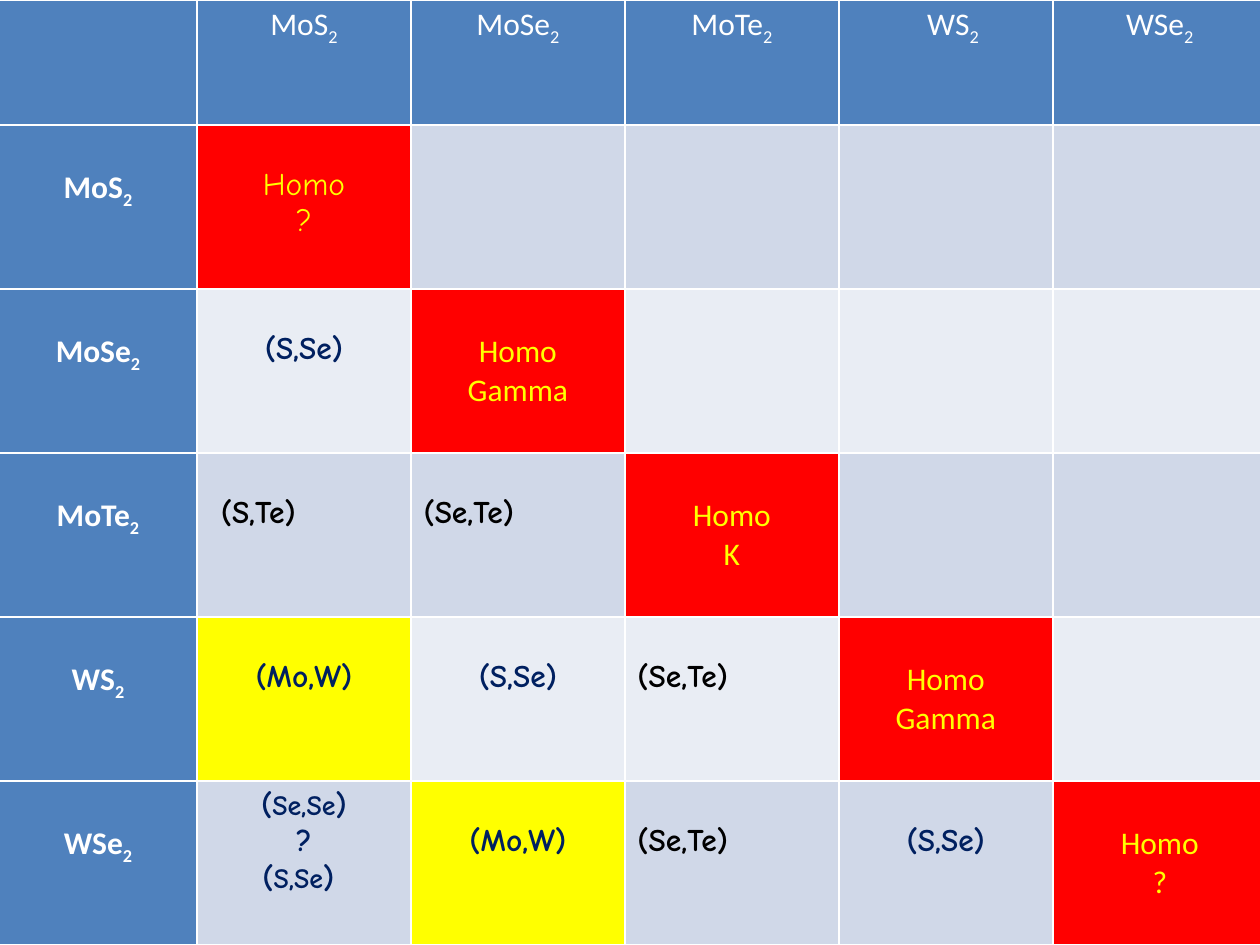
from dataclasses import dataclass

from lxml import etree
from pptx import Presentation
from pptx import util as u
from pptx.dml.color import RGBColor
from pptx.enum import text
from pptx.oxml.ns import qn

PX_PER_INCH = 126
BLUE, RED, YELLOW = "4F81BD", "FF0000", "FFFF00"
NAVY, BLACK, WHITE = "002060", "000000", "FFFFFF"
BANDS = ("D0D8E8", "E9EDF4")
MATERIALS = ("MoS2", "MoSe2", "MoTe2", "WS2", "WSe2")
COLUMN_WIDTHS = [198] + [214] * 5
ROW_HEIGHTS = [125] + [164] * 5
CALIBRI, COMIC = "Calibri", "Comic Neue"
PADDING, SIDE_PADDING = 6, 13
LINE_HEIGHTS = {CALIBRI: 38, COMIC: 36}


@dataclass(frozen=True)
class Entry:
    """Text of one material pair; drop is the number of lines left free above."""
    lines: tuple[str, ...]
    color: str = NAVY
    font: str = COMIC
    bold: bool = True
    centered: bool = True
    fill: str | None = None
    drop: int = 1
    inner_size: int = 18


def homo(valley: str, font: str = CALIBRI) -> Entry:
    return Entry(("Homo", valley), YELLOW, font, bold=False, fill=RED)


def tellurium_pair(label: str) -> Entry:
    return Entry((label,), BLACK, centered=False)


SULFUR_SELENIUM = Entry(("(S,Se)",))
METALS = Entry(("(Mo,W)",), fill=YELLOW)
SELENIUM_TELLURIUM = tellurium_pair("(Se,Te)")
# Lower triangle of the matrix, one tuple for each row material.
PAIRS = (
    (homo("?", COMIC),),
    (SULFUR_SELENIUM, homo("Gamma")),
    (tellurium_pair(" (S,Te)"), SELENIUM_TELLURIUM, homo("K")),
    (METALS, SULFUR_SELENIUM, SELENIUM_TELLURIUM, homo("Gamma")),
    (Entry(("(Se,Se)", "?", "(S,Se) "), drop=0, inner_size=16), METALS,
     SELENIUM_TELLURIUM, SULFUR_SELENIUM, homo("?")),
)


def px(length: int) -> u.Emu:
    return u.Emu(round(length * 914400 / PX_PER_INCH))


def rgb(color: str) -> RGBColor:
    return RGBColor.from_string(color)


def add_run(paragraph, content: str, *, font: str, color: str, bold: bool,
            size: int = 18, subscript: bool = False) -> None:
    run = paragraph.add_run()
    run.text = content
    run.font.name, run.font.size, run.font.bold = font, u.Pt(size), bold
    run.font.color.rgb = rgb(color)
    if subscript:
        run._r.get_or_add_rPr().set("baseline", "-25000")


def style_cell(cell, fill: str) -> None:
    """Give the cell thin white borders and a solid fill."""
    properties = cell._tc.get_or_add_tcPr()
    for side in ("a:lnL", "a:lnR", "a:lnT", "a:lnB"):
        line = etree.SubElement(properties, qn(side), w=str(u.Pt(1)))
        solid = etree.SubElement(line, qn("a:solidFill"))
        etree.SubElement(solid, qn("a:srgbClr"), val=WHITE)
    cell.fill.solid()
    cell.fill.fore_color.rgb = rgb(fill)


def write_formula(cell, formula: str, *, bold: bool, drop: int) -> None:
    """Write a material's name with its last digit as a subscript."""
    cell.margin_top = px(PADDING + drop * LINE_HEIGHTS[CALIBRI])
    paragraph = cell.text_frame.paragraphs[0]
    paragraph.alignment = text.PP_ALIGN.CENTER
    style = dict(font=CALIBRI, color=WHITE, bold=bold)
    add_run(paragraph, formula[:-1], **style)
    add_run(paragraph, formula[-1], subscript=True, **style)


def write_entry(cell, entry: Entry) -> None:
    cell.margin_top = px(PADDING + entry.drop * LINE_HEIGHTS[entry.font])
    frame = cell.text_frame
    style = dict(font=entry.font, color=entry.color, bold=entry.bold)
    for index, line in enumerate(entry.lines):
        paragraph = frame.add_paragraph() if index else frame.paragraphs[0]
        if entry.centered:
            paragraph.alignment = text.PP_ALIGN.CENTER
        if entry.inner_size != 18 and line.startswith("("):
            inner, after = line[1:].split(")")
            add_run(paragraph, "(", **style)
            add_run(paragraph, inner, size=entry.inner_size, **style)
            add_run(paragraph, ")" + after, **style)
        else:
            add_run(paragraph, line, **style)


def add_matrix(slide) -> None:
    count = len(MATERIALS) + 1
    table = slide.shapes.add_table(
        count, count, px(-1), px(0),
        px(sum(COLUMN_WIDTHS)), px(sum(ROW_HEIGHTS))).table
    table.first_row = table.horz_banding = False
    for column, width in zip(table.columns, COLUMN_WIDTHS):
        column.width = px(width)
    for row, height in zip(table.rows, ROW_HEIGHTS):
        row.height = px(height)

    style_cell(table.cell(0, 0), BLUE)
    for index, material in enumerate(MATERIALS, start=1):
        header, label = table.cell(0, index), table.cell(index, 0)
        style_cell(header, BLUE)
        style_cell(label, BLUE)
        write_formula(header, material, bold=False, drop=0)
        write_formula(label, material, bold=True, drop=1)
        if material == "WS2":
            header.margin_left = px(SIDE_PADDING + 14)

        entries = PAIRS[index - 1]
        band = BANDS[(index - 1) % 2]
        for column in range(1, count):
            cell = table.cell(index, column)
            entry = entries[column - 1] if column <= len(entries) else None
            style_cell(cell, entry.fill if entry and entry.fill else band)
            if entry:
                write_entry(cell, entry)


def main() -> None:
    presentation = Presentation()
    presentation.slide_width, presentation.slide_height = px(1260), px(945)
    slide = presentation.slides.add_slide(presentation.slide_layouts[6])
    add_matrix(slide)
    presentation.save("out.pptx")


if __name__ == "__main__":
    main()
